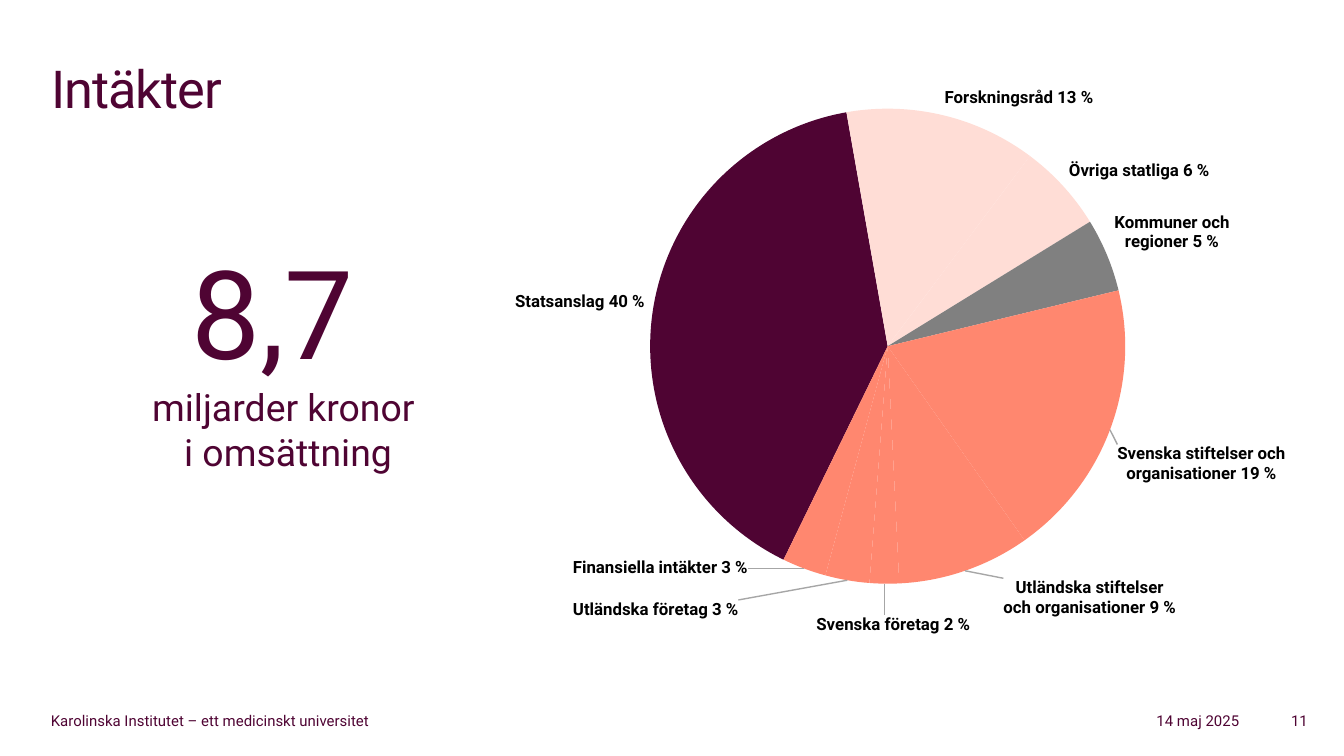
from dataclasses import dataclass

from lxml.etree import SubElement
from pptx import Presentation
from pptx.chart.data import CategoryChartData
from pptx.dml.color import RGBColor
from pptx.enum.chart import XL_CHART_TYPE, XL_LABEL_POSITION
from pptx.enum.text import MSO_ANCHOR, PP_ALIGN
from pptx.oxml import parse_xml
from pptx.oxml.ns import nsdecls, qn
from pptx.util import Inches, Pt


@dataclass(frozen=True)
class Theme:
    font: str = "Roboto"
    plum: str = "4F0433"
    blush: str = "FFDDD6"
    coral: str = "FF876F"
    grey: str = "808080"
    leader: str = "A6A6A6"
    black: str = "000000"
    white: str = "FFFFFF"
    title_size: float = 28
    figure_size: float = 66
    caption_size: float = 20
    chart_size: float = 10
    label_size: float = 9
    footer_size: float = 8


THEME = Theme()

# Category, share, colour
INCOME = [
    ("Statsanslag 40 %", 40, THEME.plum),
    ("Forskningsråd 13 %", 13, THEME.blush),
    ("Övriga statliga 6 %", 6, THEME.blush),
    ("Kommuner och regioner 5 %", 5, THEME.grey),
    ("Svenska stiftelser och organisationer 19 %", 19, THEME.coral),
    ("Utländska stiftelser och organisationer 9 %", 9, THEME.coral),
    ("Svenska företag 2 %", 2, THEME.coral),
    ("Utländska företag 3 %", 3, THEME.coral),
    ("Finansiella intäkter 3 %", 3, THEME.coral),
]

# By slice number, as fractions of the chart box
LABEL_SHIFTS = {4: (0, 0.02), 5: (0.04, 0), 6: (0.01, 0.04), 7: (-0.12, 0.02), 8: (-0.06, -0.03)}
LABEL_SIZES = {5: (0.18, 0.11), 8: (0.18, 0.07)}


def format_font(font, size, color=THEME.plum, bold=False):
    font.name = THEME.font
    font.size = Pt(size)
    font.bold = bold
    font.color.rgb = RGBColor.from_string(color)


def write_text(shape, lines, align=PP_ALIGN.LEFT, anchor=MSO_ANCHOR.TOP, spacing=None):
    """Write (text, size) lines as one paragraph with line breaks."""
    frame = shape.text_frame
    frame.word_wrap = True
    frame.vertical_anchor = anchor
    paragraph = frame.paragraphs[0]
    paragraph.alignment = align
    for index, (text, size) in enumerate(lines):
        if index:
            paragraph.add_line_break()
        run = paragraph.add_run()
        run.text = text
        format_font(run.font, size)
        if spacing is not None:
            run.font._element.set("spc", str(spacing))


def add_text(slide, box, lines, **text_format):
    shape = slide.shapes.add_textbox(*map(Inches, box))
    write_text(shape, lines, **text_format)
    return shape


def add_title(slide, box, text):
    title = slide.shapes.title
    title.left, title.top, title.width, title.height = map(Inches, box)
    write_text(title, [(text, THEME.title_size)], spacing=-50)


def add_key_figure(slide, box):
    lines = [
        ("8,7 ", THEME.figure_size),
        ("miljarder kronor ", THEME.caption_size),
        ("i omsättning", THEME.caption_size),
    ]
    add_text(slide, box, lines, align=PP_ALIGN.CENTER)


def manual_layout(**values):
    layout = parse_xml(f"<c:layout {nsdecls('c')}><c:manualLayout/></c:layout>")
    for name, value in values.items():
        SubElement(layout[0], qn(f"c:{name}")).set("val", str(value))
    return layout


def label_size_extension(width, height):
    return parse_xml(
        f"<c:extLst {nsdecls('c')}><c:ext uri=\"{{CE6537A1-D6FC-4f65-9D91-7224C49458BB}}\" "
        "xmlns:c15=\"http://schemas.microsoft.com/office/drawing/2012/chart\">"
        f"<c15:layout><c:manualLayout><c:w val=\"{width}\"/><c:h val=\"{height}\"/>"
        "</c:manualLayout></c15:layout></c:ext></c:extLst>")


def style_labels(series):
    labels = series.data_labels
    labels.show_value = False
    labels.show_category_name = True
    labels.position = XL_LABEL_POSITION.OUTSIDE_END
    format_font(labels.font, THEME.label_size, THEME.black, bold=True)

    # Shifted and resized labels
    for index, (x, y) in LABEL_SHIFTS.items():
        label = series.points[index].data_label
        label.position = XL_LABEL_POSITION.OUTSIDE_END
        format_font(label.font, THEME.label_size, THEME.black, bold=True)
        element = series._element.xpath(f"c:dLbls/c:dLbl[c:idx/@val='{index}']")[0]
        element.find(qn("c:idx")).addnext(manual_layout(x=x, y=y))
        element.find(qn("c:showVal")).set("val", "0")
        element.find(qn("c:showCatName")).set("val", "1")
        if index in LABEL_SIZES:
            element.append(label_size_extension(*LABEL_SIZES[index]))

    # Leader lines
    labels_element = series._element.find(qn("c:dLbls"))
    for old in labels_element.findall(qn("c:showLeaderLines")):
        labels_element.remove(old)
    SubElement(labels_element, qn("c:showLeaderLines")).set("val", "1")
    labels_element.append(parse_xml(
        f"<c:leaderLines {nsdecls('c', 'a')}><c:spPr><a:ln w=\"9525\"><a:solidFill>"
        f"<a:srgbClr val=\"{THEME.leader}\"/></a:solidFill></a:ln></c:spPr></c:leaderLines>"))


def add_income_pie(slide, box):
    data = CategoryChartData()
    data.categories = [name for name, _, _ in INCOME]
    data.add_series("Series 1", [share for _, share, _ in INCOME])
    chart = slide.shapes.add_chart(XL_CHART_TYPE.PIE, *map(Inches, box), data).chart
    chart.has_legend = False
    chart.has_title = False
    format_font(chart.font, THEME.chart_size, THEME.black)

    # Slices
    plot = chart.plots[0]
    plot.vary_by_categories = True
    series = plot.series[0]
    series.format.line.color.rgb = RGBColor.from_string(THEME.white)
    series.format.line.width = Pt(0.75)
    for index, (_, _, color) in enumerate(INCOME):
        fill = series.points[index].format.fill
        fill.solid()
        fill.fore_color.rgb = RGBColor.from_string(color)
    style_labels(series)

    # Rotation and plot area
    pie = chart._chartSpace.xpath("//c:pieChart")[0]
    for old in pie.findall(qn("c:firstSliceAng")):
        pie.remove(old)
    SubElement(pie, qn("c:firstSliceAng")).set("val", "206")
    plot_area = pie.getparent()
    for old in plot_area.findall(qn("c:layout")):
        plot_area.remove(old)
    plot_area.insert(0, manual_layout(layoutTarget="inner", xMode="edge", yMode="edge",
                                      x=0.22, y=0.07, w=0.53, h=0.8))


def add_footer(slide, box):
    left, top, width, height = box
    parts = [
        (0, 3.07, "Karolinska Institutet – ett medicinskt universitet", PP_ALIGN.LEFT),
        (width - 2.59, 2.08, "14 maj 2025", PP_ALIGN.RIGHT),
        (width - 0.75, 0.75, "11", PP_ALIGN.RIGHT),
    ]
    for offset, part_width, text, align in parts:
        shape = add_text(slide, (left + offset, top, part_width, height),
                         [(text, THEME.footer_size)], align=align, anchor=MSO_ANCHOR.BOTTOM)
        shape.text_frame.margin_top = shape.text_frame.margin_bottom = 0


def main():
    presentation = Presentation()
    presentation.slide_width = Inches(10)
    presentation.slide_height = Inches(10) * 9 // 16
    slide = presentation.slides.add_slide(presentation.slide_layouts[5])

    add_title(slide, (0.28, 0.37, 9.44, 0.94), "Intäkter")
    add_key_figure(slide, (0.31, 1.71, 3.67, 1.88))
    add_income_pie(slide, (3.37, 0.49, 6.67, 4.44))
    add_footer(slide, (0.28, 5.24, 9.55, 0.19))
    presentation.save("out.pptx")


if __name__ == "__main__":
    main()
